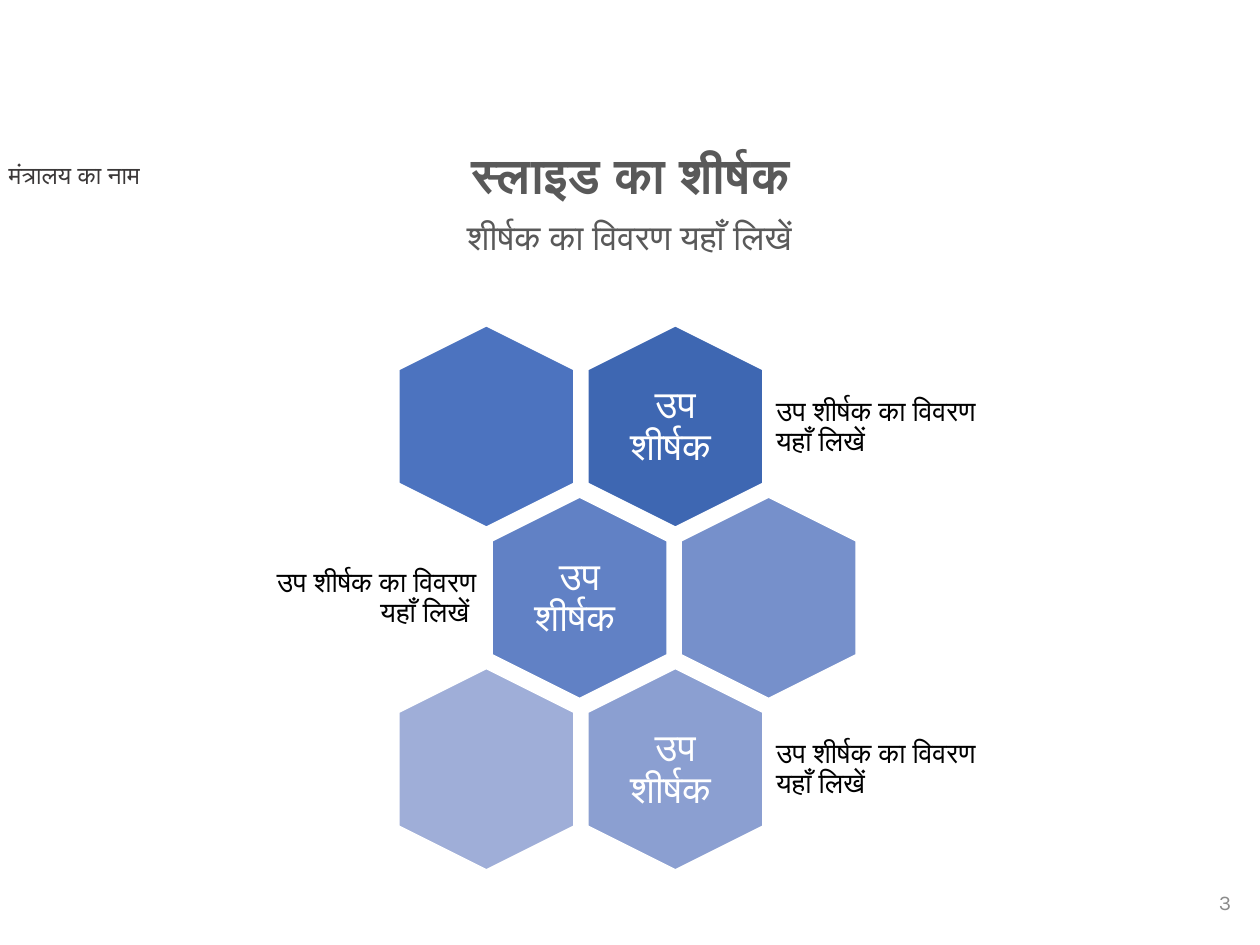
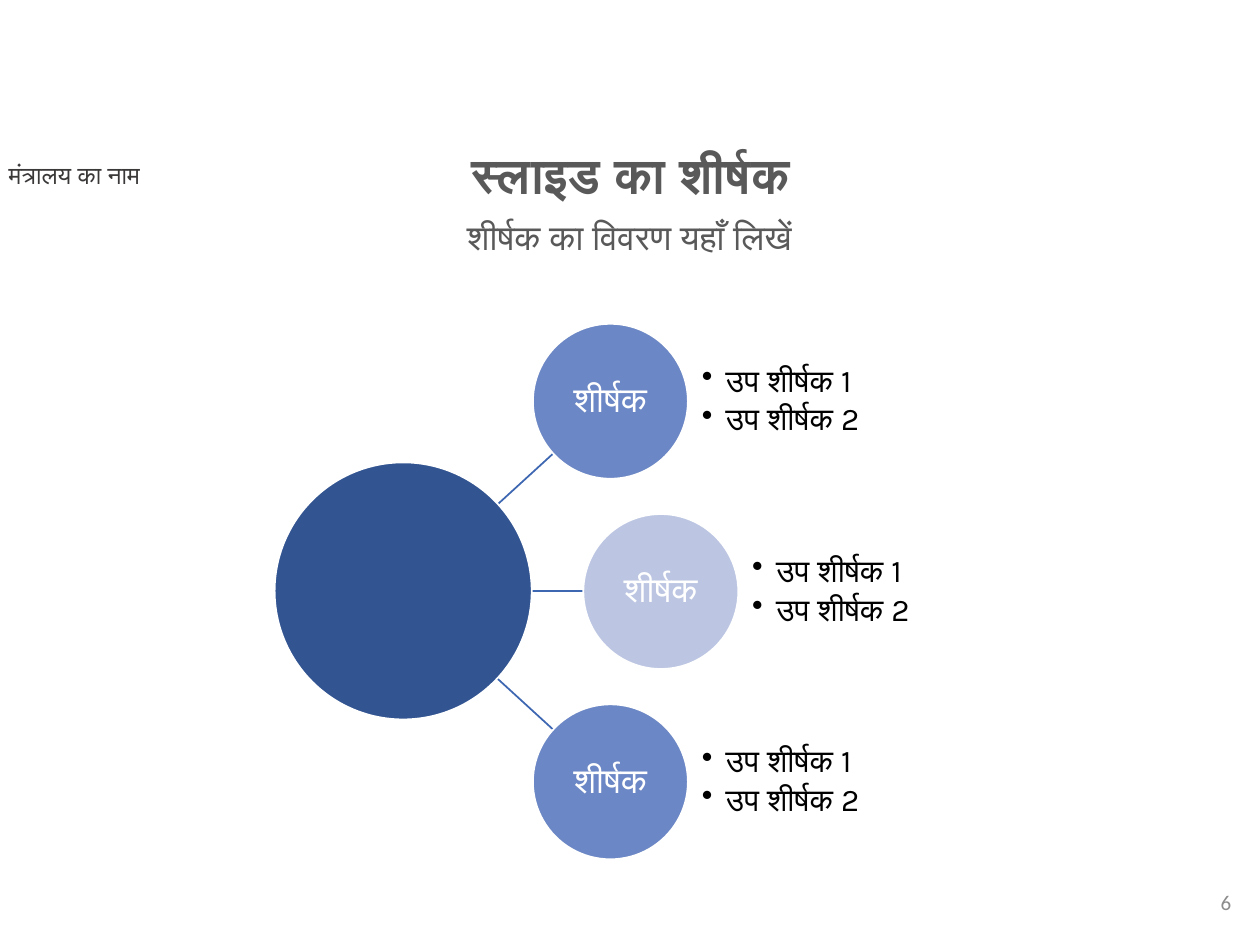
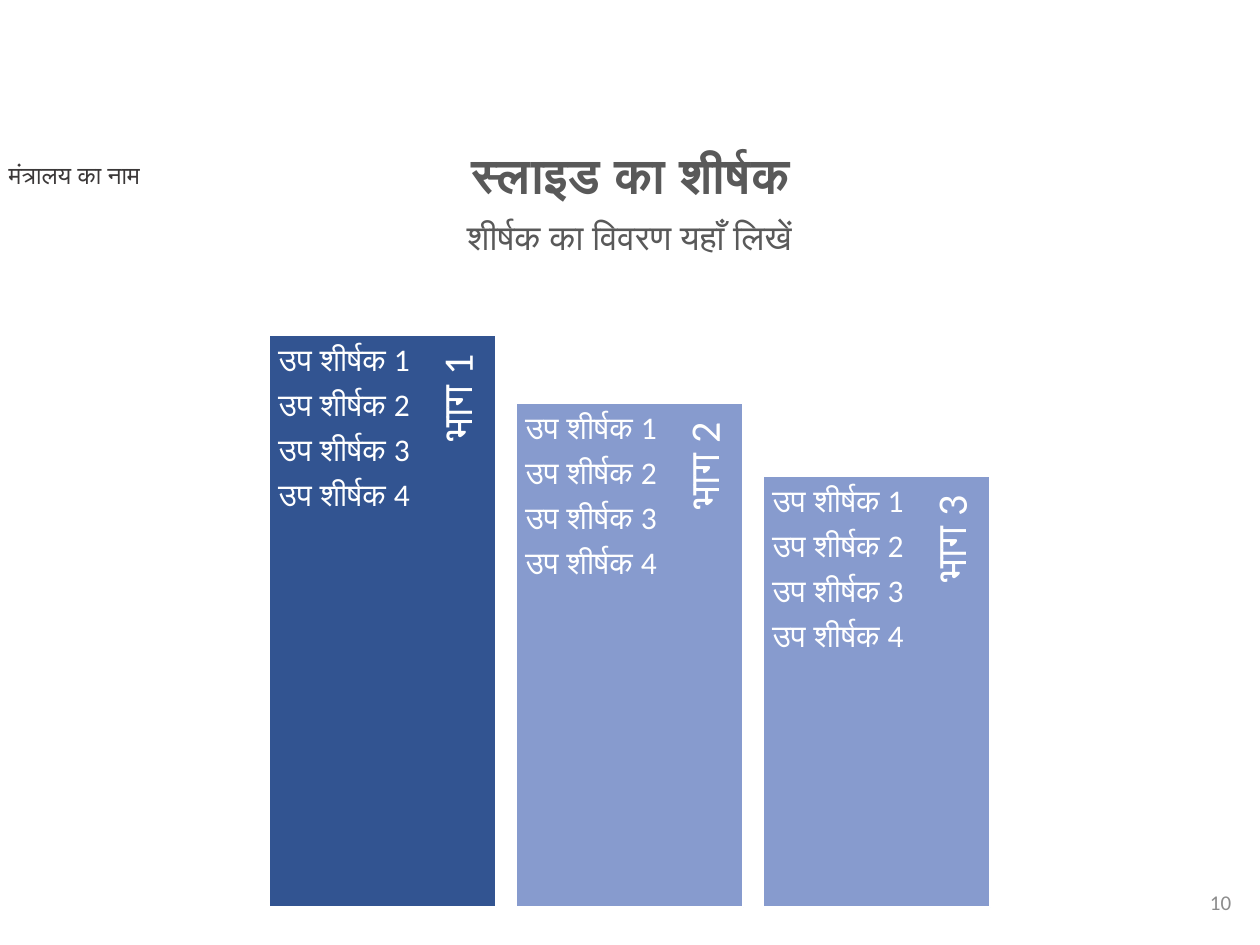
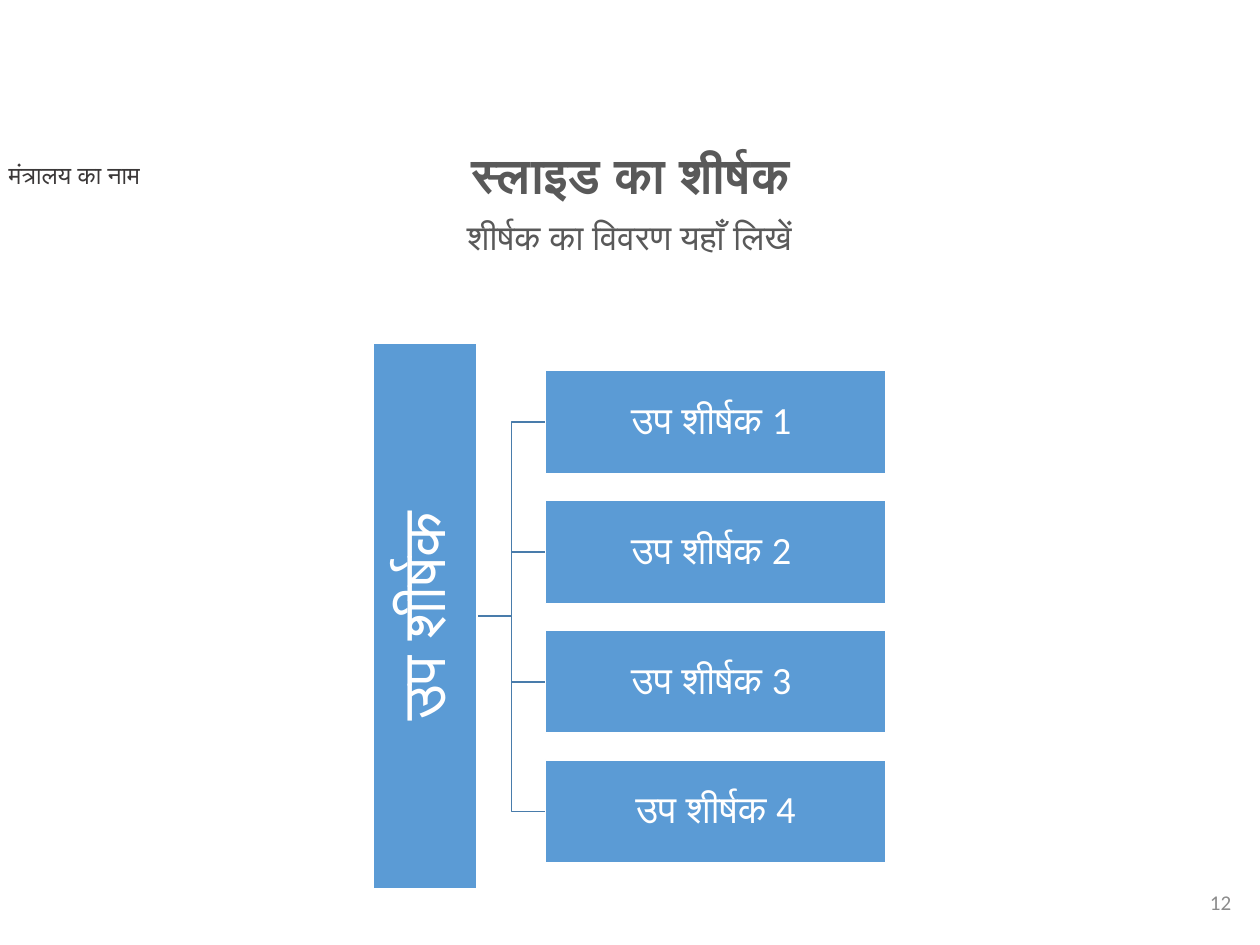
from lxml import etree
from pptx import Presentation
from pptx import util as u
from pptx.dml.color import RGBColor
from pptx.enum import shapes, text
from pptx.oxml import ns

WHITE, BLACK, GREY = "FFFFFF", "000000", "595959"
NAVY, BLUE, SKY = "325491", "3E67B2", "5B9BD5"
LEFT, CENTER, RIGHT = text.PP_ALIGN.LEFT, text.PP_ALIGN.CENTER, text.PP_ALIGN.RIGHT
TOP, MIDDLE = text.MSO_ANCHOR.TOP, text.MSO_ANCHOR.MIDDLE
SHAPE = shapes.MSO_SHAPE
LINE = shapes.MSO_CONNECTOR


def rgb(value):
    """Turn a hex string into a colour."""
    return RGBColor.from_string(value)


class Deck:
    """Holds the shared style and the current slide."""

    def __init__(self):
        """Start an empty 4:3 presentation."""
        self.prs = Presentation()
        self.prs.slide_width, self.prs.slide_height = u.Inches(10), u.Inches(7.5)
        self.slide = None

    def new_slide(self, number, number_font="Calibri"):
        """Add a slide with the ministry name, headings and page number."""
        self.slide = self.prs.slides.add_slide(self.prs.slide_layouts[6])
        margins = (0.1, 0.05, 0.1, 0.05)
        self.box(-0.03, 1.22, 2.18, 0.34, ["मंत्रालय का नाम"], 14, "3B3838",
                 margins=margins)
        self.box(1.86, 1.15, 6.29, 0.47, ["स्लाइड का शीर्षक"], 28, GREY,
                 align=CENTER, margins=margins, spacing=0.9, bold=True)
        self.box(1.46, 1.7, 7.07, 0.63, ["शीर्षक का विवरण यहाँ लिखें"], 20, GREY,
                 align=CENTER, margins=margins, spacing=0.9)
        self.box(7.62, 6.96, 2.25, 0.4, [str(number)], 12, "8C8C8C",
                 align=RIGHT, anchor=MIDDLE, margins=margins, font=number_font)

    def label(self, sp, lines, size, color, align=LEFT, anchor=TOP, margins=(0,) * 4,
              font="Calibri", spacing=1.0, after=0.0, bold=False, bullet=False):
        """Fill a shape with one paragraph per line."""
        tf = sp.text_frame
        tf.word_wrap = True
        tf.vertical_anchor = anchor
        (tf.margin_left, tf.margin_top,
         tf.margin_right, tf.margin_bottom) = map(u.Inches, margins)
        for i, line in enumerate(lines):
            p = tf.add_paragraph() if i else tf.paragraphs[0]
            p.alignment, p.line_spacing = align, spacing
            p.space_after = u.Pt(size * after)
            if bullet:
                self.bullet(p)
            r = p.add_run()
            r.text = line
            r.font.name, r.font.size, r.font.bold = font, u.Pt(size), bold
            r.font.color.rgb = rgb(color)

    def bullet(self, p):
        """Give a paragraph a hanging round bullet."""
        pr = p._p.get_or_add_pPr()
        pr.set("marL", str(u.Inches(0.19)))
        pr.set("indent", str(-u.Inches(0.19)))
        etree.SubElement(pr, ns.qn("a:buChar")).set("char", "•")

    def box(self, x, y, w, h, lines, size, color, rotation=0, **style):
        """Add a text box."""
        sp = self.slide.shapes.add_textbox(*map(u.Inches, (x, y, w, h)))
        sp.rotation = rotation
        self.label(sp, lines, size, color, **style)

    def shape(self, kind, x, y, w, h, fill, rotation=0):
        """Add a filled preset shape with a thin white outline."""
        sp = self.slide.shapes.add_shape(kind, *map(u.Inches, (x, y, w, h)))
        sp.shadow.inherit = False
        sp.rotation = rotation
        sp.fill.solid()
        sp.fill.fore_color.rgb = rgb(fill)
        sp.line.color.rgb = rgb(WHITE)
        sp.line.width = u.Pt(1)
        return sp

    def line(self, kind, x1, y1, x2, y2, color):
        """Add a thin connector."""
        c = self.slide.shapes.add_connector(kind, *map(u.Inches, (x1, y1, x2, y2)))
        c.line.color.rgb = rgb(color)
        c.line.width = u.Pt(1)
        etree.SubElement(c._element.spPr, ns.qn("a:effectLst"))


def hexagons(deck):
    """Build the honeycomb slide."""
    deck.new_slide(3, "Karla")
    detail = "उप शीर्षक का विवरण यहाँ लिखें"
    rows = [
        (3.06, ("4C73BF", BLUE), 1, (6.09, 1.78, LEFT, detail)),
        (3.8, ("6181C5", "7690CB"), 0, (2.12, 1.73, RIGHT, detail + " ")),
        (3.06, ("9FAED8", "8B9FD1"), 1, (6.09, 1.78, LEFT, detail)),
    ]
    for row, (left, fills, titled, (note_x, note_w, align, note)) in enumerate(rows):
        y = 2.69 + 1.36 * row
        for col, fill in enumerate(fills):
            x = left + 1.5 * col
            sp = deck.shape(SHAPE.HEXAGON, x, y, 1.6, 1.39, fill, rotation=90)
            sp.adjustments[0] = 0.25
            if col == titled:
                deck.box(x + 0.32, y + 0.15, 0.96, 1.1, ["उप शीर्षक "], 22, WHITE,
                         align=CENTER, anchor=MIDDLE, margins=(0.09,) * 4,
                         spacing=0.9, after=0.35)
        deck.box(note_x, y + 0.22, note_w, 0.96, [note], 16, BLACK, align=align,
                 anchor=MIDDLE, margins=(0.07,) * 4, spacing=0.9, after=0.35)


def circles(deck):
    """Build the hub and spokes slide."""
    deck.new_slide(6)
    for y1, x2, y2 in ((5.36, 4.39, 5.79), (4.69, 4.63, 4.69), (4.03, 4.39, 3.6)):
        deck.line(LINE.STRAIGHT, 3.92, y1, x2, y2, BLUE)
    deck.shape(SHAPE.OVAL, 2.18, 3.67, 2.04, 2.04, NAVY)
    spokes = [(4.23, "6C87C5"), (4.63, "BCC6E2"), (4.23, "6C87C5")]
    for i, (x, fill) in enumerate(spokes):
        y = 2.57 + 1.51 * i
        sp = deck.shape(SHAPE.OVAL, x, y, 1.23, 1.23, fill)
        deck.label(sp, ["शीर्षक"], 20, WHITE, align=CENTER, anchor=MIDDLE,
                   margins=(0.01,) * 4, font="Karla", spacing=0.9)
        deck.box(x + 1.34, y, 1.84, 1.23, ["उप शीर्षक 1", "उप शीर्षक 2"], 18, BLACK,
                 anchor=MIDDLE, font="Karla", spacing=0.9, after=0.15, bullet=True)


def columns(deck):
    """Build the descending columns slide."""
    deck.new_slide(10)
    items = [f"उप शीर्षक {n}" for n in range(1, 5)]
    for i, (top, fill) in enumerate([(2.66, NAVY), (3.2, "879BCE"), (3.78, "879BCE")]):
        x, h = 2.14 + 1.96 * i, 7.2 - top
        deck.shape(SHAPE.RECTANGLE, x, top, 1.8, h, fill)
        label_w, label_h = 0.9 * h, 0.47
        deck.box(x + 1.52 - label_w / 2, top + (label_w - label_h) / 2, label_w, label_h,
                 [f"भाग {i + 1}"], 24, WHITE, rotation=270, align=RIGHT, anchor=MIDDLE,
                 margins=(0.1, 0, 0.15, 0.03), spacing=0.9, after=0.35)
        deck.box(x, top, 1.28, h + 0.02, items, 18, WHITE, margins=(0.07,) * 4,
                 spacing=0.9, after=0.35)


def tree(deck):
    """Build the one-level tree slide."""
    deck.new_slide(12)
    style = dict(align=CENTER, anchor=MIDDLE, margins=(0.02,) * 4, spacing=0.9)
    tops = [2.94 + 1.03 * i for i in range(4)]
    for y in tops:
        deck.line(LINE.ELBOW, 3.79, 4.89, 4.33, y + 0.41, "497CAB")
    root = deck.shape(SHAPE.RECTANGLE, 1.21, 4.48, 4.33, 0.82, SKY, rotation=270)
    deck.label(root, ["उप शीर्षक"], 35, WHITE, **style)
    labels = ["उप शीर्षक 1 ", "उप शीर्षक 2 ", "उप शीर्षक 3 ", "उप शीर्षक 4"]
    for y, label in zip(tops, labels):
        sp = deck.shape(SHAPE.RECTANGLE, 4.33, y, 2.7, 0.82, SKY)
        deck.label(sp, [label], 22, WHITE, **style)


def main():
    """Build and save the deck."""
    deck = Deck()
    for build in (hexagons, circles, columns, tree):
        build(deck)
    deck.prs.save("out.pptx")


if __name__ == "__main__":
    main()
